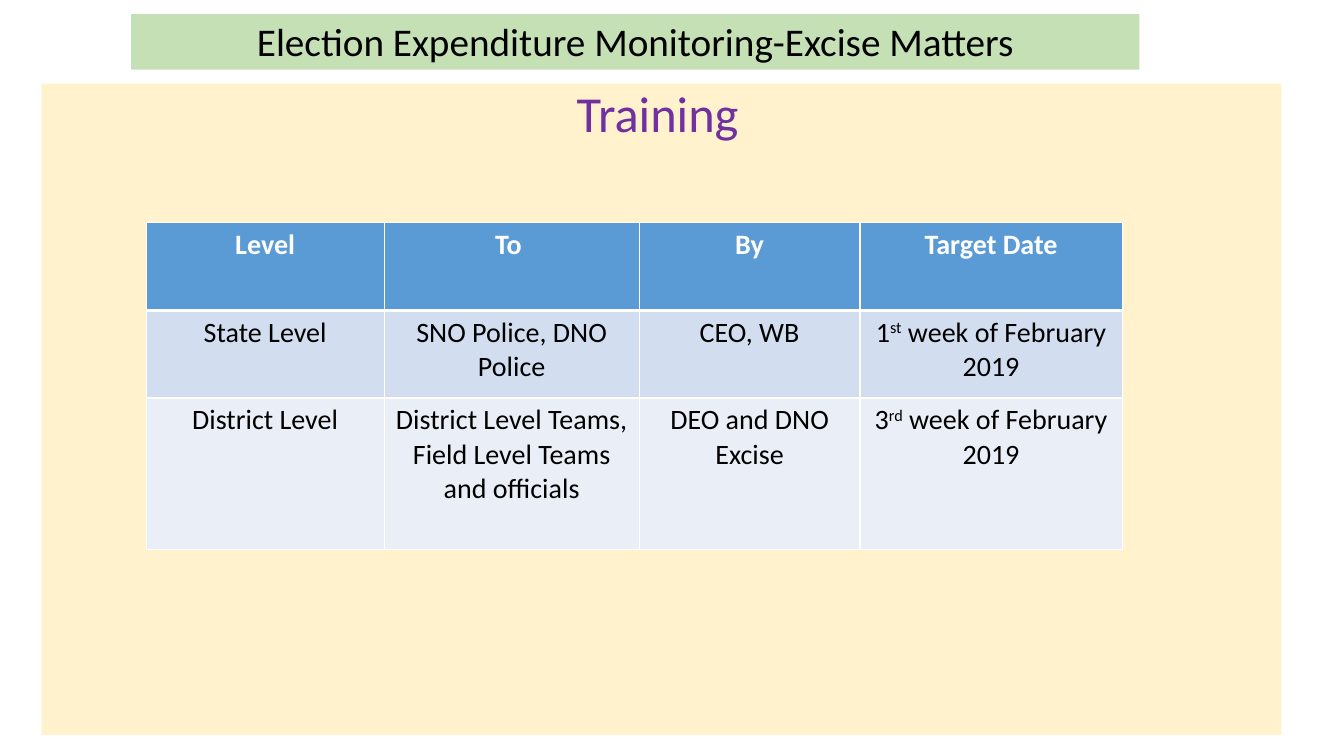
from lxml.etree import SubElement
from pptx import Presentation
from pptx.dml.color import RGBColor
from pptx.enum.text import MSO_ANCHOR as Anchor, MSO_AUTO_SIZE as AutoSize, PP_ALIGN as Align
from pptx.oxml.ns import qn
from pptx.util import Inches, Pt

FONT = "Calibri"
COLUMN_WIDTHS = [2.36, 2.53, 2.19, 2.6]
ROW_HEIGHTS = [0.87, 0.87, 1.5]
ROW_FILLS = ["5B9BD5", "D2DEEF", "EAEFF7"]
# Each cell is a list of runs; the second run of three is superscript
TRAINING_ROWS = [
    [["Level"], ["To "], ["By"], ["Target Date"]],
    [["State Level"], ["SNO Police, DNO Police"], ["CEO, WB"],
     ["1", "st", " week of February 2019"]],
    [["District Level"], ["District Level Teams, Field Level Teams and officials"],
     ["DEO and DNO Excise"], ["3", "rd", " week of February 2019"]],
]


def paint(target, color):
    target.fill.solid()
    target.fill.fore_color.rgb = RGBColor.from_string(color)


def add_span(para, text, size, color="000000", bold=False, raised=False):
    span = para.add_run()
    span.text = text
    font = span.font
    font.name, font.size, font.bold = FONT, Pt(size), bold
    font.color.rgb = RGBColor.from_string(color)
    if raised:
        span._r.get_or_add_rPr().set("baseline", "30000")


def set_border(cell, side, width, color="FFFFFF"):
    line = SubElement(cell._tc.get_or_add_tcPr(), qn(f"a:ln{side}"), w=str(Pt(width)))
    SubElement(SubElement(line, qn("a:solidFill")), qn("a:srgbClr"), val=color)


def fill_placeholder(holder, box, fill, anchor, spans, space_before=0):
    holder.left, holder.top, holder.width, holder.height = [Inches(v) for v in box]
    paint(holder, fill)
    frame = holder.text_frame
    frame.auto_size = AutoSize.NONE
    frame.word_wrap = True
    frame.vertical_anchor = anchor
    para = frame.paragraphs[0]
    para.alignment = Align.CENTER
    para.line_spacing = 0.9
    para.space_before = Pt(space_before)
    for text, size, color in spans:
        add_span(para, text, size, color)


def add_training_table(page, box):
    table = page.shapes.add_table(len(ROW_HEIGHTS), len(COLUMN_WIDTHS),
                                  *[Inches(v) for v in box]).table
    for column, width in zip(table.columns, COLUMN_WIDTHS):
        column.width = Inches(width)
    for row, height in zip(table.rows, ROW_HEIGHTS):
        row.height = Inches(height)
    for r, row_texts in enumerate(TRAINING_ROWS):
        header = r == 0
        for c, texts in enumerate(row_texts):
            cell = table.cell(r, c)
            # Thick rule between the header and the first body row
            for side, width in [("L", 1), ("R", 1), ("T", 3 if r == 1 else 1),
                                ("B", 3 if header else 1)]:
                set_border(cell, side, width)
            paint(cell, ROW_FILLS[r])
            para = cell.text_frame.paragraphs[0]
            para.alignment = Align.CENTER
            for i, text in enumerate(texts):
                add_span(para, text, 20, "FFFFFF" if header else "000000",
                         bold=header, raised=i == 1)


def build_training_slide(deck):
    page = deck.slides.add_slide(deck.slide_layouts[0])
    # Title band
    fill_placeholder(page.shapes.title, (1.3, 0.14, 10, 0.55), "C5E0B4", Anchor.BOTTOM,
                     [("Election Expenditure Monitoring-Excise Matters", 28, "000000")])
    # Cream panel with its heading
    fill_placeholder(page.placeholders[1], (0.41, 0.83, 12.3, 6.46), "FFF2CC", Anchor.TOP,
                     [("Training", 36, "7030A0"), (" ", 24, "000000")], space_before=10)
    # Training schedule
    add_training_table(page, (1.45, 2.21, sum(COLUMN_WIDTHS), sum(ROW_HEIGHTS)))


def main():
    deck = Presentation()
    deck.slide_width, deck.slide_height = Inches(13.33), Inches(7.5)
    build_training_slide(deck)
    deck.save("out.pptx")


if __name__ == "__main__":
    main()
